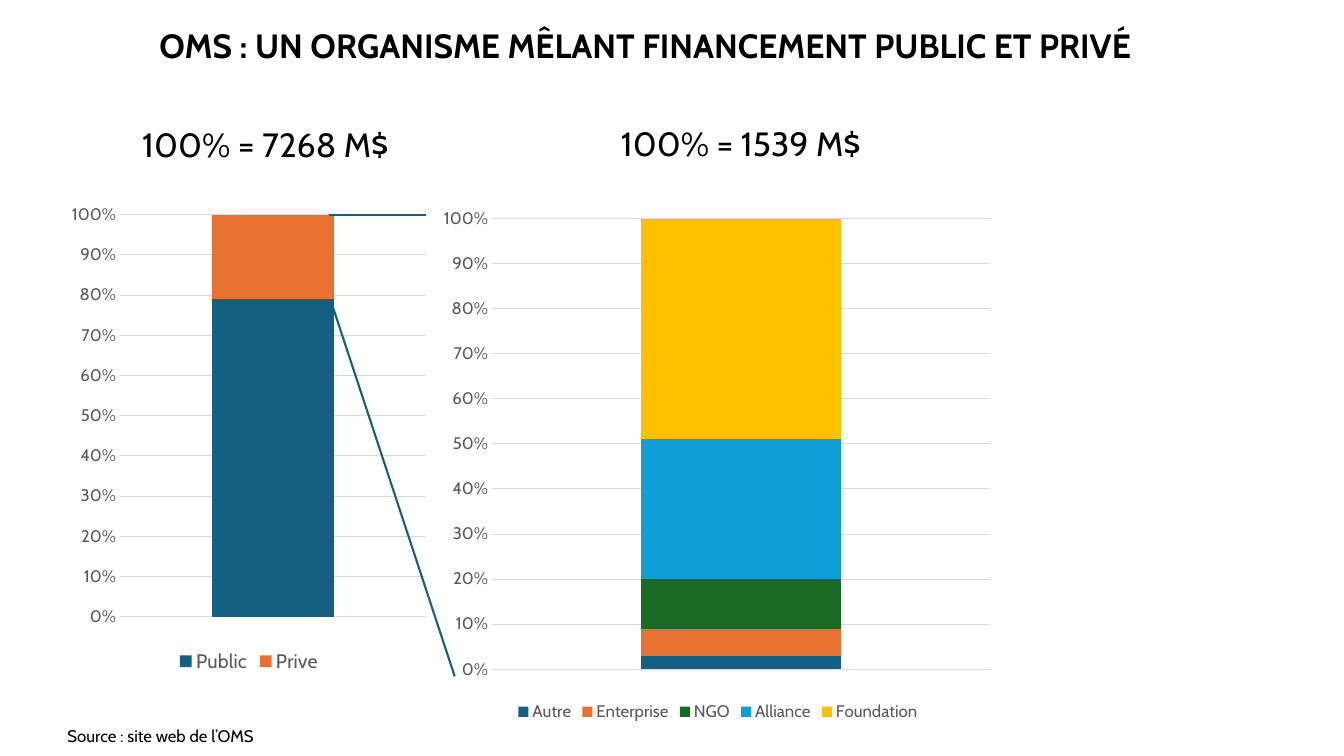
from dataclasses import dataclass

import lxml.etree
import pptx
import pptx.chart.data
import pptx.dml.color
import pptx.enum.chart
import pptx.enum.shapes
import pptx.enum.text
import pptx.oxml
import pptx.oxml.ns
import pptx.util

PX = 9144
FONT = "Cabin"
COLOURS = {
    "text": "000000",
    "label": "595959",
    "grid": "D9D9D9",
    "blue": "156082",
    "orange": "E97132",
    "green": "196B24",
    "sky": "0F9ED5",
    "yellow": "FFC000",
}


@dataclass(frozen=True)
class Box:
    left: int
    top: int
    width: int
    height: int

    def emu(self) -> list[int]:
        return [side * PX for side in (self.left, self.top, self.width, self.height)]


@dataclass(frozen=True)
class Series:
    name: str
    percent: int
    colour: str


@dataclass(frozen=True)
class FundingChart:
    frame: Box
    plot: Box
    legend_size: int
    series: tuple[Series, ...]


@dataclass(frozen=True)
class Link:
    start: tuple[int, int]
    end: tuple[int, int]


CHARTS = (
    FundingChart(
        Box(64, 195, 366, 477), Box(119, 213, 304, 399), 14,
        (Series("Public", 79, "blue"), Series("Prive", 21, "orange")),
    ),
    FundingChart(
        Box(430, 197, 564, 523), Box(488, 217, 494, 447), 12,
        (
            Series("Autre", 3, "blue"),
            Series("Enterprise", 6, "orange"),
            Series("NGO", 11, "green"),
            Series("Alliance", 31, "sky"),
            Series("Foundation", 49, "yellow"),
        ),
    ),
)
LINKS = (Link((328, 298), (451, 671)), Link((326, 213), (423, 213)))


def colour(name: str) -> pptx.dml.color.RGBColor:
    return pptx.dml.color.RGBColor.from_string(COLOURS[name])


def style_font(font, *, size: int, tint: str = "text", bold: bool = False) -> None:
    font.name = FONT
    font.size = pptx.util.Pt(size)
    font.bold = bold
    font.color.rgb = colour(tint)


def write_text(shape, text: str, *, box: Box, size: int = 24, bold: bool = False,
               anchor=pptx.enum.text.MSO_ANCHOR.TOP, space_before: int = 10) -> None:
    shape.left, shape.top, shape.width, shape.height = box.emu()
    frame = shape.text_frame
    frame.word_wrap = True
    frame.auto_size = pptx.enum.text.MSO_AUTO_SIZE.NONE
    frame.vertical_anchor = anchor
    para = frame.paragraphs[0]
    para.alignment = pptx.enum.text.PP_ALIGN.LEFT
    para.line_spacing = 0.9
    para.space_before = pptx.util.Pt(space_before)
    span = para.add_run()
    span.text = text
    style_font(span.font, size=size, bold=bold)


def place_plot(chart, frame: Box, plot: Box) -> None:
    area = chart.plots[0]._element.getparent()
    for old in area.findall(pptx.oxml.ns.qn("c:layout")):
        area.remove(old)
    layout = lxml.etree.Element(pptx.oxml.ns.qn("c:layout"))
    manual = lxml.etree.SubElement(layout, pptx.oxml.ns.qn("c:manualLayout"))
    settings = {
        "layoutTarget": "inner",
        "xMode": "edge",
        "yMode": "edge",
        "x": (plot.left - frame.left) / frame.width,
        "y": (plot.top - frame.top) / frame.height,
        "w": plot.width / frame.width,
        "h": plot.height / frame.height,
    }
    for tag, value in settings.items():
        lxml.etree.SubElement(manual, pptx.oxml.ns.qn(f"c:{tag}")).set("val", str(value))
    area.insert(0, layout)


def draw_chart(page, funding: FundingChart) -> None:
    data = pptx.chart.data.CategoryChartData()
    data.categories = ["1"]
    for entry in funding.series:
        data.add_series(entry.name, [entry.percent])
    kind = pptx.enum.chart.XL_CHART_TYPE.COLUMN_STACKED_100
    chart = page.shapes.add_chart(kind, *funding.frame.emu(), data).chart
    style_font(chart.font, size=10)
    chart.has_title = False
    chart.category_axis.visible = False

    axis = chart.value_axis
    axis.minimum_scale, axis.maximum_scale, axis.major_unit = 0, 1, 0.1
    axis.major_tick_mark = pptx.enum.chart.XL_TICK_MARK.NONE
    axis.format.line.fill.background()
    axis.major_gridlines.format.line.color.rgb = colour("grid")
    axis.major_gridlines.format.line.width = pptx.util.Pt(0.75)
    axis.tick_labels.number_format = "0%"
    axis.tick_labels.number_format_is_linked = False
    style_font(axis.tick_labels.font, size=12, tint="label")

    plot = chart.plots[0]
    plot.gap_width, plot.overlap, plot.vary_by_categories = 150, 100, False
    for drawn, entry in zip(plot.series, funding.series):
        drawn.format.fill.solid()
        drawn.format.fill.fore_color.rgb = colour(entry.colour)

    chart.has_legend = True
    chart.legend.position = pptx.enum.chart.XL_LEGEND_POSITION.BOTTOM
    chart.legend.include_in_layout = False
    style_font(chart.legend.font, size=funding.legend_size, tint="label")
    place_plot(chart, funding.frame, funding.plot)


def draw_link(page, link: Link) -> None:
    ends = [value * PX for value in link.start + link.end]
    line = page.shapes.add_connector(pptx.enum.shapes.MSO_CONNECTOR.STRAIGHT, *ends)
    line.line.color.rgb = colour("blue")
    line.line.width = pptx.util.Pt(1.5)
    lxml.etree.SubElement(line._element.spPr, pptx.oxml.ns.qn("a:effectLst"))


def main() -> None:
    deck = pptx.Presentation()
    deck.slide_width, deck.slide_height = 1333 * PX, 750 * PX
    page = deck.slides.add_slide(deck.slide_layouts[0])
    write_text(page.shapes.title, "OMS : UN ORGANISME MÊLANT FINANCEMENT PUBLIC ET PRIVÉ",
               box=Box(148, 18, 1000, 52), bold=True, space_before=0,
               anchor=pptx.enum.text.MSO_ANCHOR.BOTTOM)
    write_text(page.placeholders[1], "100% = 7268 M$", box=Box(131, 122, 366, 61))
    for funding in CHARTS:
        draw_chart(page, funding)
    for link in LINKS:
        draw_link(page, link)
    for text, box, size in (
        ("100% = 1539 M$", Box(606, 122, 366, 61), 24),
        ("Source : site web de l’OMS", Box(57, 717, 366, 30), 12),
    ):
        write_text(page.shapes.add_textbox(*box.emu()), text, box=box, size=size)
    deck.save("out.pptx")


if __name__ == "__main__":
    main()
